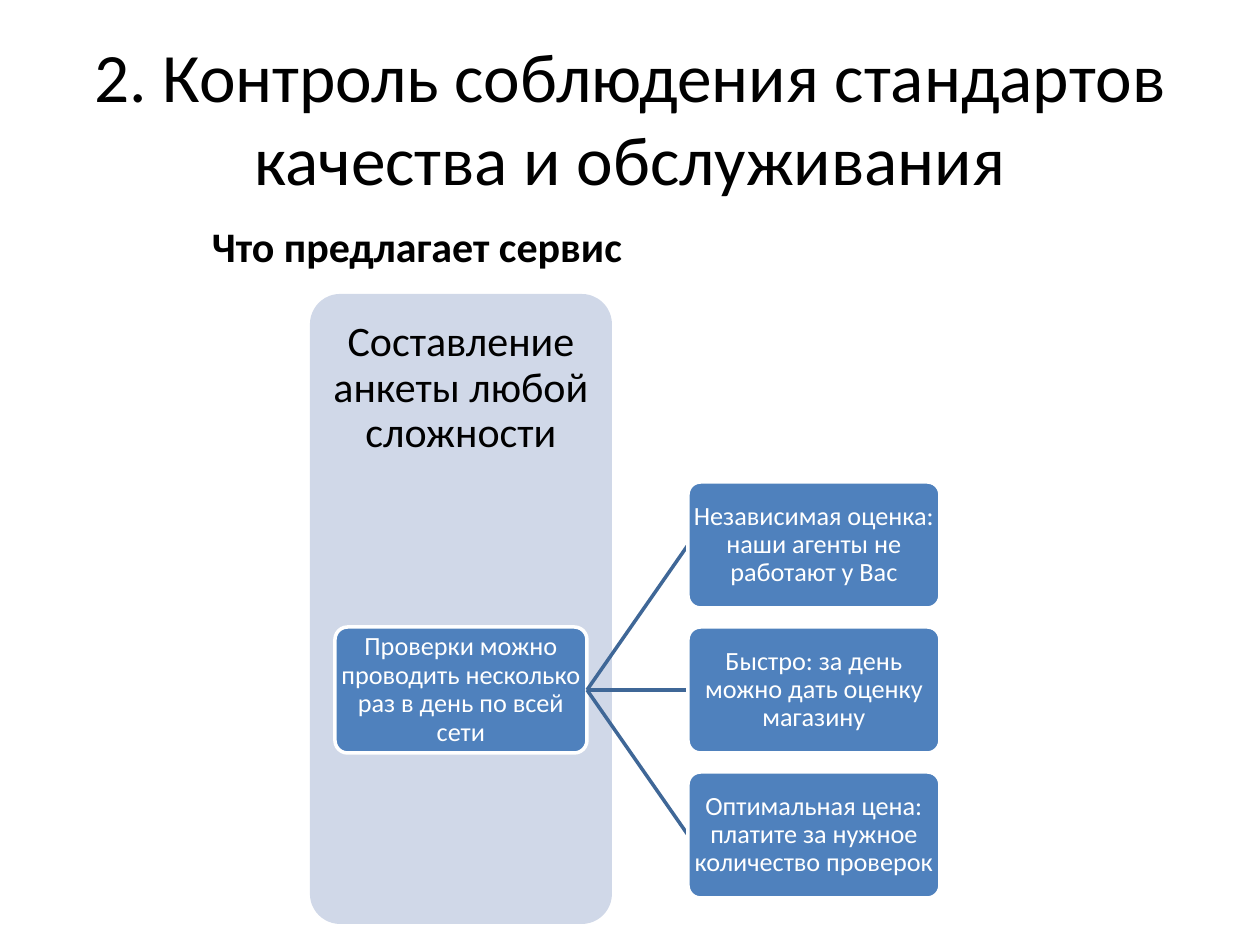
from dataclasses import dataclass

from lxml import etree
from pptx import Presentation
from pptx.dml.color import RGBColor
from pptx.enum.shapes import MSO_CONNECTOR, MSO_SHAPE
from pptx.enum.text import MSO_ANCHOR, PP_ALIGN
from pptx.oxml.ns import qn
from pptx.util import Emu, Pt

ROUNDED = MSO_SHAPE.ROUNDED_RECTANGLE
STRAIGHT = MSO_CONNECTOR.STRAIGHT
LEFT, CENTER = PP_ALIGN.LEFT, PP_ALIGN.CENTER
MIDDLE, BOTTOM = MSO_ANCHOR.MIDDLE, MSO_ANCHOR.BOTTOM
LEFT_SIDE, RIGHT_SIDE = 1, 3

PX_PER_INCH = 126
FONT = "Calibri"
BLACK, WHITE = "000000", "FFFFFF"
PANEL_FILL, BOX_FILL, LINK = "D0D8E8", "4F81BD", "3F6797"


@dataclass
class Area:
    left: int
    top: int
    width: int
    height: int

    def emu(self) -> list[Emu]:
        return [px(v) for v in (self.left, self.top, self.width, self.height)]


@dataclass
class TextStyle:
    size: float
    color: str = BLACK
    bold: bool = False
    align: int = CENTER
    anchor: int = MIDDLE
    inset_x: int = 13
    inset_y: int = 6
    line_spacing: float = 1.0


def px(value: int) -> Emu:
    return Emu(round(value * 914400 / PX_PER_INCH))


def rgb(color: str) -> RGBColor:
    return RGBColor.from_string(color)


def set_all(target, values: dict) -> None:
    for name, value in values.items():
        setattr(target, name, value)


def write(shape, text: str, style: TextStyle) -> None:
    frame = shape.text_frame
    frame.text = text
    x, y = px(style.inset_x), px(style.inset_y)
    set_all(frame, {"word_wrap": True, "vertical_anchor": style.anchor,
                    "margin_left": x, "margin_right": x,
                    "margin_top": y, "margin_bottom": y})
    paragraph = frame.paragraphs[0]
    set_all(paragraph, {"alignment": style.align,
                        "line_spacing": style.line_spacing})
    font = paragraph.runs[0].font
    set_all(font, {"name": FONT, "size": Pt(style.size), "bold": style.bold})
    font.color.rgb = rgb(style.color)


def add_text(slide, area: Area, text: str, style: TextStyle) -> None:
    write(slide.shapes.add_textbox(*area.emu()), text, style)


def add_rounded(slide, area: Area, fill: str, outline: str | None = None):
    shape = slide.shapes.add_shape(ROUNDED, *area.emu())
    shape.adjustments[0] = 0.1
    shape.shadow.inherit = False
    shape.fill.solid()
    shape.fill.fore_color.rgb = rgb(fill)
    if outline:
        shape.line.color.rgb = rgb(outline)
        shape.line.width = Pt(2)
    else:
        shape.line.fill.background()
    return shape


def add_box(slide, left: int, top: int, text: str):
    box = add_rounded(slide, Area(left, top, BOX_W, BOX_H), BOX_FILL, WHITE)
    write(box, text, BOX_STYLE)
    return box


def add_link(slide, source):
    """Start a link at the right side of source; its end is joined later."""
    x, y = source.left + source.width, source.top + source.height // 2
    link = slide.shapes.add_connector(STRAIGHT, x, y, x, y)
    link.line.color.rgb = rgb(LINK)
    link.line.width = Pt(2)
    etree.SubElement(link._element.spPr, qn("a:effectLst"))
    link.begin_connect(source, RIGHT_SIDE)
    return link


BOX_W, BOX_H = 252, 126
CHECKS_LEFT, CHECKS_TOP = 335, 627
BENEFITS_LEFT, BENEFIT_STEP = 688, 145
TITLE_STYLE = TextStyle(39.6)
SUBTITLE_STYLE = TextStyle(24, bold=True, align=LEFT, anchor=BOTTOM)
HEADING_STYLE = TextStyle(24, inset_x=22, inset_y=24, line_spacing=0.9)
BOX_STYLE = TextStyle(15, WHITE, inset_x=1, inset_y=1, line_spacing=0.9)

BENEFITS = [
    "Независимая оценка: наши агенты не работают у Вас",
    "Быстро: за день можно дать оценку магазину",
    "Оптимальная цена: платите за нужное количество проверок",
]


def main() -> None:
    deck = Presentation()
    set_all(deck, {"slide_width": px(1260), "slide_height": px(945)})
    slide = deck.slides.add_slide(deck.slide_layouts[5])

    # Title and subtitle
    title = slide.shapes.title
    set_all(title, dict(zip(("left", "top", "width", "height"),
                            Area(63, 38, 1134, 157).emu())))
    write(title, "2. Контроль соблюдения стандартов качества и обслуживания",
          TITLE_STYLE)
    add_text(slide, Area(199, 189, 557, 88), "Что предлагает сервис",
             SUBTITLE_STYLE)

    # Panel with its heading
    add_rounded(slide, Area(310, 294, 302, 630), PANEL_FILL)
    add_text(slide, Area(310, 294, 302, 189),
             "Составление анкеты любой сложности", HEADING_STYLE)

    # Checks box, branching to the benefits; links lie behind the benefits
    checks = add_box(slide, CHECKS_LEFT, CHECKS_TOP,
                     "Проверки можно проводить несколько раз в день по всей сети")
    first_top = CHECKS_TOP - BENEFIT_STEP
    for row, text in enumerate(BENEFITS):
        link = add_link(slide, checks)
        benefit = add_box(slide, BENEFITS_LEFT,
                          first_top + row * BENEFIT_STEP, text)
        link.end_connect(benefit, LEFT_SIDE)

    deck.save("out.pptx")


if __name__ == "__main__":
    main()
